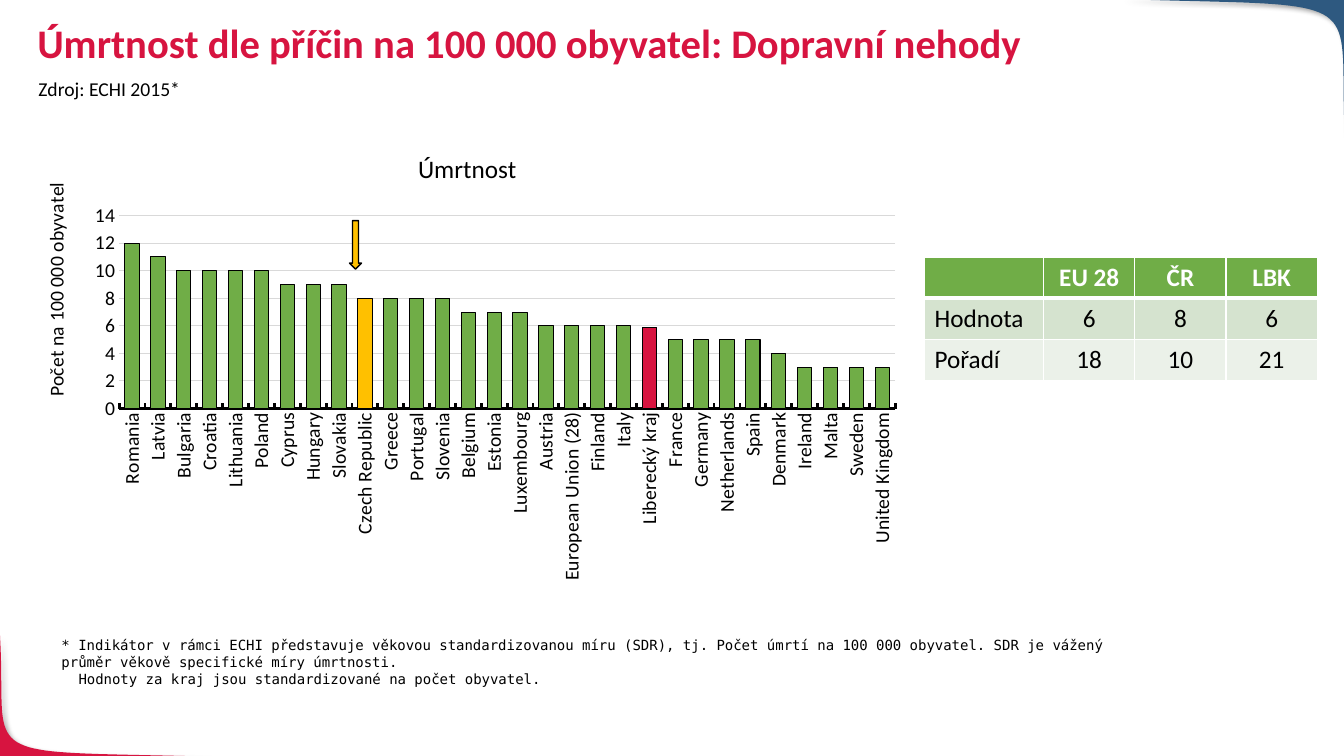
import pptx
import pptx.chart.data
import pptx.dml.color
import pptx.enum.chart
import pptx.enum.shapes
import pptx.enum.text
import pptx.oxml
import pptx.oxml.ns
import pptx.util

Cm, Pt = pptx.util.Cm, pptx.util.Pt
NAMESPACE = pptx.oxml.ns.nsdecls("a")
GREEN, YELLOW, RED, BLUE = "70AD47", "FFC000", "D71440", "2E5980"
BLACK, WHITE = "000000", "FFFFFF"
DEATHS = {
    "Romania": 12, "Latvia": 11, "Bulgaria": 10, "Croatia": 10, "Lithuania": 10,
    "Poland": 10, "Cyprus": 9, "Hungary": 9, "Slovakia": 9, "Czech Republic": 8,
    "Greece": 8, "Portugal": 8, "Slovenia": 8, "Belgium": 7, "Estonia": 7,
    "Luxembourg": 7, "Austria": 6, "European Union (28)": 6, "Finland": 6,
    "Italy": 6, "Liberecký kraj": 5.9, "France": 5, "Germany": 5,
    "Netherlands": 5, "Spain": 5, "Denmark": 4, "Ireland": 3, "Malta": 3,
    "Sweden": 3, "United Kingdom": 3,
}
HIGHLIGHTS = {"Czech Republic": YELLOW, "Liberecký kraj": RED}
RANKING = [["", "EU 28", "ČR", "LBK"], ["Hodnota", "6", "8", "6"], ["Pořadí", "18", "10", "21"]]


def color(value):
    """Return the RGB colour for a hex string."""
    return pptx.dml.color.RGBColor.from_string(value)


def style_font(font, size, value=BLACK, bold=False, name="Calibri"):
    """Set face, size, weight and colour of a font."""
    font.name, font.size, font.bold = name, Pt(size), bold
    font.color.rgb = color(value)


def paint(target, fill, width=None):
    """Fill a shape or chart part and give it a black outline if a width is set."""
    target.fill.solid()
    target.fill.fore_color.rgb = color(fill)
    if width:
        target.line.color.rgb = color(BLACK)
        target.line.width = Pt(width)
    else:
        target.line.fill.background()


def add_text(page, box, lines, size, value=BLACK, bold=False, name="Calibri", wrap=True):
    """Add a text box with one paragraph per line and return its frame."""
    frame = page.shapes.add_textbox(*map(Cm, box)).text_frame
    frame.word_wrap = wrap
    for index, line in enumerate(lines):
        para = frame.paragraphs[0] if index == 0 else frame.add_paragraph()
        span = para.add_run()
        span.text = line
        style_font(span.font, size, value, bold, name)
    return frame


def add_corner(page, curve, corner, fill):
    """Draw a shaded slide corner bounded by a cubic curve."""
    steps = 40
    points = []
    for step in range(steps + 1):
        t = step / steps
        weights = ((1 - t) ** 3, 3 * t * (1 - t) ** 2, 3 * t * t * (1 - t), t ** 3)
        points.append(tuple(Cm(sum(w * p[axis] for w, p in zip(weights, curve))) for axis in (0, 1)))
    builder = page.shapes.build_freeform(*points[0])
    builder.add_line_segments(points[1:] + [tuple(map(Cm, corner))], close=True)
    shape = builder.convert_to_shape()
    paint(shape, fill)
    shape.shadow.inherit = False
    effects = shape._element.spPr.find(pptx.oxml.ns.qn("a:effectLst"))
    effects.append(pptx.oxml.parse_xml(
        f'<a:outerShdw {NAMESPACE} blurRad="{Pt(4)}" dist="{Pt(3)}" dir="2700000">'
        f'<a:srgbClr val="{BLACK}"><a:alpha val="40000"/></a:srgbClr></a:outerShdw>'))


def add_header(page, box):
    """Place the heading and the source line."""
    left, top = box[:2]
    frame = add_text(page, box, ["Úmrtnost dle příčin na 100 000 obyvatel: Dopravní nehody"],
                     29, RED, True)
    frame.paragraphs[0].line_spacing = 0.9
    add_text(page, (left + 0.03, top + 1.35, 4.11, 0.86), ["Zdroj: ECHI 2015*"], 14, wrap=False)


def set_layout(element, x, y, width=None, height=None):
    """Give a chart part a fixed place as fractions of the chart."""
    layout = element.find(pptx.oxml.ns.qn("c:layout"))
    if layout is not None:
        element.remove(layout)
    inner = '<c:layoutTarget val="inner"/>' if width else ""
    extent = f'<c:w val="{width}"/><c:h val="{height}"/>' if width else ""
    position = 0 if element.find(pptx.oxml.ns.qn("c:tx")) is None else 1
    element.insert(position, pptx.oxml.parse_xml(
        f'<c:layout {pptx.oxml.ns.nsdecls("c")}><c:manualLayout>{inner}<c:xMode val="edge"/>'
        f'<c:yMode val="edge"/><c:x val="{x}"/><c:y val="{y}"/>{extent}'
        f'</c:manualLayout></c:layout>'))


def add_chart_title(owner, text, size, x, y):
    """Title a chart or axis at a fixed place."""
    owner.has_title = True
    title = owner.chart_title if hasattr(owner, "chart_title") else owner.axis_title
    span = title.text_frame.paragraphs[0].add_run()
    span.text = text
    style_font(span.font, size)
    set_layout(title._element, x, y)


def add_mortality_chart(page, box):
    """Place the column chart and the arrow above the Czech column."""
    left, top = box[:2]
    enums = pptx.enum.chart
    data = pptx.chart.data.CategoryChartData()
    data.categories = list(DEATHS)
    data.add_series("Úmrtnost", list(DEATHS.values()))
    chart = page.shapes.add_chart(enums.XL_CHART_TYPE.COLUMN_CLUSTERED, *map(Cm, box), data).chart
    style_font(chart.font, 10)
    chart.has_legend = False
    add_chart_title(chart, "Úmrtnost", 18, 0.44, 0.03)
    plot = chart.plots[0]
    plot.gap_width, plot.overlap, plot.vary_by_categories = 81, -27, False
    columns = plot.series[0]
    paint(columns.format, GREEN, 0.75)
    for country, fill in HIGHLIGHTS.items():
        paint(columns.points[list(DEATHS).index(country)].format, fill, 0.75)

    countries, values = chart.category_axis, chart.value_axis
    for axis in (countries, values):
        style_font(axis.tick_labels.font, 14)
    countries.major_tick_mark = enums.XL_TICK_MARK.INSIDE
    countries.format.line.color.rgb = color(BLACK)
    countries.format.line.width = Pt(2)
    body = countries._element.find(".//" + pptx.oxml.ns.qn("a:bodyPr"))
    body.set("rot", "-5400000")
    body.set("vert", "horz")
    values.minimum_scale, values.maximum_scale, values.major_unit = 0, 14, 2
    values.major_tick_mark = enums.XL_TICK_MARK.NONE
    values.tick_labels.number_format = "#,##0"
    values.tick_labels.number_format_is_linked = False
    values.format.line.fill.background()
    values.major_gridlines.format.line.color.rgb = color("D9D9D9")
    values.major_gridlines.format.line.width = Pt(0.75)
    add_chart_title(values, "Počet na 100 000 obyvatel", 14, 0.02, 0.1)
    set_layout(chart._chartSpace.chart.plotArea, 0.11, 0.18, 0.87, 0.42)

    arrow = page.shapes.add_shape(pptx.enum.shapes.MSO_SHAPE.DOWN_ARROW,
                                  Cm(left + 8.28), Cm(top + 2.21), Cm(0.3), Cm(1.22))
    arrow.shadow.inherit = False
    paint(arrow, YELLOW, 1)


def add_ranking_table(page, box):
    """Place the table of values and ranks."""
    table = page.shapes.add_table(len(RANKING), len(RANKING[0]), *map(Cm, box)).table
    for column, width in zip(table.columns, (3, 2.3, 2.3, 2.3)):
        column.width = Cm(width)
    for row, (texts, fill) in enumerate(zip(RANKING, (GREEN, "D5E3CF", "EBF1E9"))):
        for column, text in enumerate(texts):
            cell = table.cell(row, column)
            cell.fill.solid()
            cell.fill.fore_color.rgb = color(fill)
            para = cell.text_frame.paragraphs[0]
            if column:
                cell.margin_left = cell.margin_right = cell.margin_top = Cm(0.03)
                cell.margin_bottom = 0
                cell.vertical_anchor = pptx.enum.text.MSO_ANCHOR.MIDDLE
                para.alignment = pptx.enum.text.PP_ALIGN.CENTER
            if text:
                span = para.add_run()
                span.text = text
                style_font(span.font, 18, BLACK if row else WHITE, row == 0)
            for index, side in enumerate("LRTB"):
                heavy = (row, side) in ((0, "B"), (1, "T"))
                cell._tc.get_or_add_tcPr().insert(index, pptx.oxml.parse_xml(
                    f'<a:ln{side} {NAMESPACE} w="{Pt(3 if heavy else 1)}"><a:solidFill>'
                    f'<a:srgbClr val="{WHITE}"/></a:solidFill></a:ln{side}>'))


def add_footnote(page, box):
    """Place the note on the indicator."""
    frame = add_text(page, box, [
        "* Indikátor v rámci ECHI představuje věkovou standardizovanou míru (SDR), tj. Počet úmrtí "
        "na 100 000 obyvatel. SDR je vážený průměr věkově specifické míry úmrtnosti.",
        "Hodnoty za kraj jsou standardizované na počet obyvatel."], 10, name="DejaVu Sans Mono")
    frame.margin_top = 0
    frame.paragraphs[1]._p.get_or_add_pPr().set("marL", str(Cm(0.43)))


def main():
    """Build the slide and save it."""
    deck = pptx.Presentation()
    deck.slide_width, deck.slide_height = Cm(33.87), Cm(19.05)
    page = deck.slides.add_slide(deck.slide_layouts[6])
    add_corner(page, ((5.41, 19.07), (-0.86, 18.9), (0.2, 19.28), (0, 16)), (-0.02, 19.07), RED)
    add_corner(page, ((28.22, -0.02), (34.8, 0.18), (33.68, -0.25), (33.9, 3.61)), (33.9, -0.02), BLUE)
    add_header(page, (0.69, 0.46, 29.21, 1.75))
    add_mortality_chart(page, (0.53, 3.35, 22.48, 11.58))
    add_ranking_table(page, (23.3, 6.48, 9.9, 3.1))
    add_footnote(page, (1.3, 16.05, 27.28, 1.88))
    deck.save("out.pptx")


if __name__ == "__main__":
    main()
